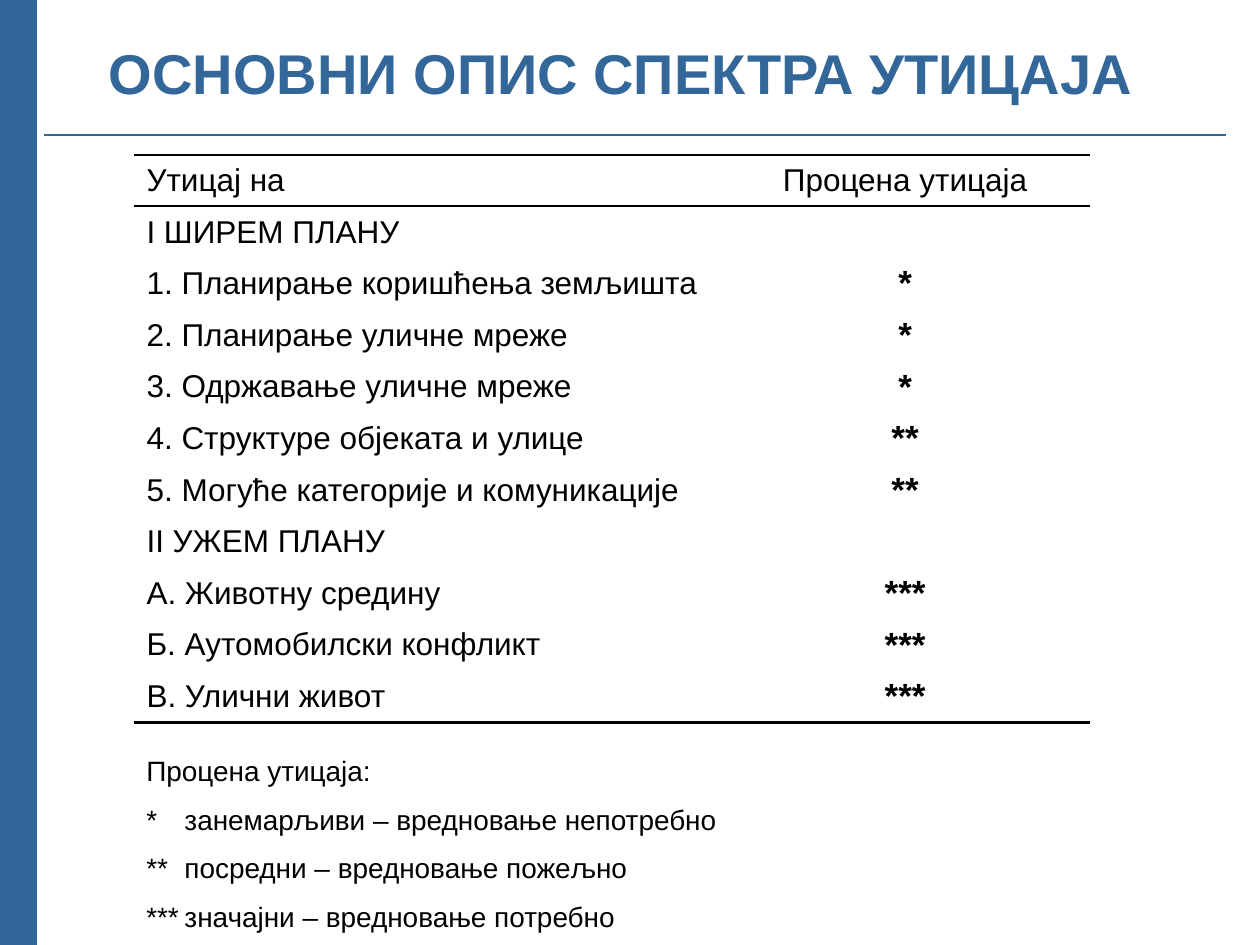
"""Build the slide on the basic description of the impact spectrum."""
from dataclasses import dataclass

import lxml.etree
import pptx
import pptx.dml.color
import pptx.enum.shapes
import pptx.enum.text
import pptx.oxml.ns
import pptx.util

Cm = pptx.util.Cm
Pt = pptx.util.Pt
RGB = pptx.dml.color.RGBColor
qn = pptx.oxml.ns.qn
ALIGN = pptx.enum.text.PP_ALIGN
MIDDLE = pptx.enum.text.MSO_ANCHOR.MIDDLE


@dataclass(frozen=True)
class Theme:
    """Colours, font and type sizes of the slide."""
    font: str = "Arial"
    accent: RGB = RGB(0x33, 0x66, 0x99)
    ink: RGB = RGB(0, 0, 0)
    title: int = 32
    body: int = 18
    rating: int = 20
    legend: int = 16
    stripe: float = 40
    hairline: float = 0.75
    rule: float = 1.5
    closing_rule: float = 2.25


THEME = Theme()

TITLE = "ОСНОВНИ ОПИС СПЕКТРА УТИЦАЈА"
IMPACTS = [
    ("Утицај на", "Процена утицаја"),
    ("I ШИРЕМ ПЛАНУ", ""),
    ("1. Планирање коришћења земљишта", "*"),
    ("2. Планирање уличне мреже", "*"),
    ("3. Одржавање уличне мреже", "*"),
    ("4. Структуре објеката и улице", "**"),
    ("5. Могуће категорије и комуникације", "**"),
    ("II УЖЕМ ПЛАНУ", ""),
    ("A. Животну средину", "***"),
    ("Б. Аутомобилски конфликт", "***"),
    ("В. Улични живот", "***"),
]
LEGEND_HEADING = "Процена утицаја:"
LEGEND = [
    ("*", "занемарљиви – вредновање непотребно"),
    ("**", "посредни – вредновање пожељно"),
    ("***", "значајни – вредновање потребно"),
]


def style(paragraph, size, color, bold=False, align=ALIGN.LEFT):
    """Set the font and alignment of a paragraph."""
    paragraph.alignment = align
    font = paragraph.font
    font.name, font.size, font.bold = THEME.font, Pt(size), bold
    font.color.rgb = color


def add_line(slide, start, end, width):
    """Draw a straight accent line between two points."""
    line = slide.shapes.add_connector(
        pptx.enum.shapes.MSO_CONNECTOR.STRAIGHT, *start, *end)
    line.line.color.rgb = THEME.accent
    line.line.width = Pt(width)
    lxml.etree.SubElement(line._element.spPr, qn("a:effectLst"))


def add_frame(slide, left, top, width, height):
    """Draw the side stripe and the rule under the title."""
    stripe_x = left + Cm(0.05)
    add_line(slide, (stripe_x, top), (stripe_x, top + height), THEME.stripe)
    rule_y = top + Cm(2.72)
    add_line(slide, (left + Cm(0.89), rule_y),
             (left + width - Cm(0.69), rule_y), THEME.hairline)


def add_title(slide, left, top, width, height):
    """Place the heading in the title placeholder."""
    title = slide.shapes.title
    title.left, title.top, title.width, title.height = left, top, width, height
    title.text_frame.text = TITLE
    title.text_frame.vertical_anchor = MIDDLE
    heading = title.text_frame.paragraphs[0]
    heading.line_spacing = 0.8
    style(heading, THEME.title, THEME.accent, True, ALIGN.CENTER)


def set_borders(cell, top=None, bottom=None):
    """Give a cell its horizontal rules and no other borders."""
    properties = cell._tc.get_or_add_tcPr()
    sides = [("a:lnL", None), ("a:lnR", None), ("a:lnT", top), ("a:lnB", bottom)]
    for position, (side, width) in enumerate(sides):
        border = lxml.etree.Element(qn(side))
        if width:
            border.set("w", str(Pt(width)))
            fill = lxml.etree.SubElement(border, qn("a:solidFill"))
            lxml.etree.SubElement(fill, qn("a:srgbClr"), val=str(THEME.ink))
        else:
            lxml.etree.SubElement(border, qn("a:noFill"))
        properties.insert(position, border)


def add_impacts(slide, left, top, width, height):
    """Tabulate the impacts with their ratings."""
    last = len(IMPACTS) - 1
    table = slide.shapes.add_table(
        len(IMPACTS), 2, left, top, width, height).table
    table.first_row = table.horz_banding = False
    table.columns[0].width = Cm(11.81)
    table.columns[1].width = width - Cm(11.81)
    top_rules = {0: THEME.rule, 1: THEME.rule}
    bottom_rules = {0: THEME.rule, last: THEME.closing_rule}
    for row, entry in enumerate(IMPACTS):
        table.rows[row].height = height // len(IMPACTS)
        for column, text in enumerate(entry):
            cell = table.cell(row, column)
            cell.text = text
            cell.fill.background()
            cell.vertical_anchor = MIDDLE
            cell.margin_top = cell.margin_bottom = Cm(0.05)
            rated = column == 1 and row > 0
            style(cell.text_frame.paragraphs[0],
                  THEME.rating if rated else THEME.body, THEME.ink, rated,
                  ALIGN.CENTER if column else ALIGN.LEFT)
            set_borders(cell, top_rules.get(row), bottom_rules.get(row))


def add_legend(slide, left, top, width, height):
    """Explain the rating marks below the table."""
    frame = slide.shapes.add_textbox(left, top, width, height).text_frame
    frame.word_wrap = True
    frame.text = "\n".join([LEGEND_HEADING, *map("\t".join, LEGEND)])
    for paragraph in frame.paragraphs:
        style(paragraph, THEME.legend, THEME.ink)
        paragraph.space_before = Pt(8.7)
    for paragraph in frame.paragraphs[1:]:
        properties = paragraph._p.get_or_add_pPr()
        properties.set("marL", str(Cm(0.77)))
        properties.set("indent", str(-Cm(0.77)))


def main():
    """Assemble and save the slide."""
    deck = pptx.Presentation()
    deck.slide_width, deck.slide_height = Cm(25.4), Cm(19.05)
    slide = deck.slides.add_slide(deck.slide_layouts[5])
    add_title(slide, Cm(1.09), Cm(0), Cm(22.86), Cm(3.18))
    add_frame(slide, Cm(0), Cm(0), deck.slide_width, deck.slide_height)
    add_impacts(slide, Cm(2.7), Cm(3.12), Cm(19.28), Cm(11.44))
    add_legend(slide, Cm(2.7), Cm(15.06), Cm(19.81), Cm(3.99))
    deck.save("out.pptx")


if __name__ == "__main__":
    main()
